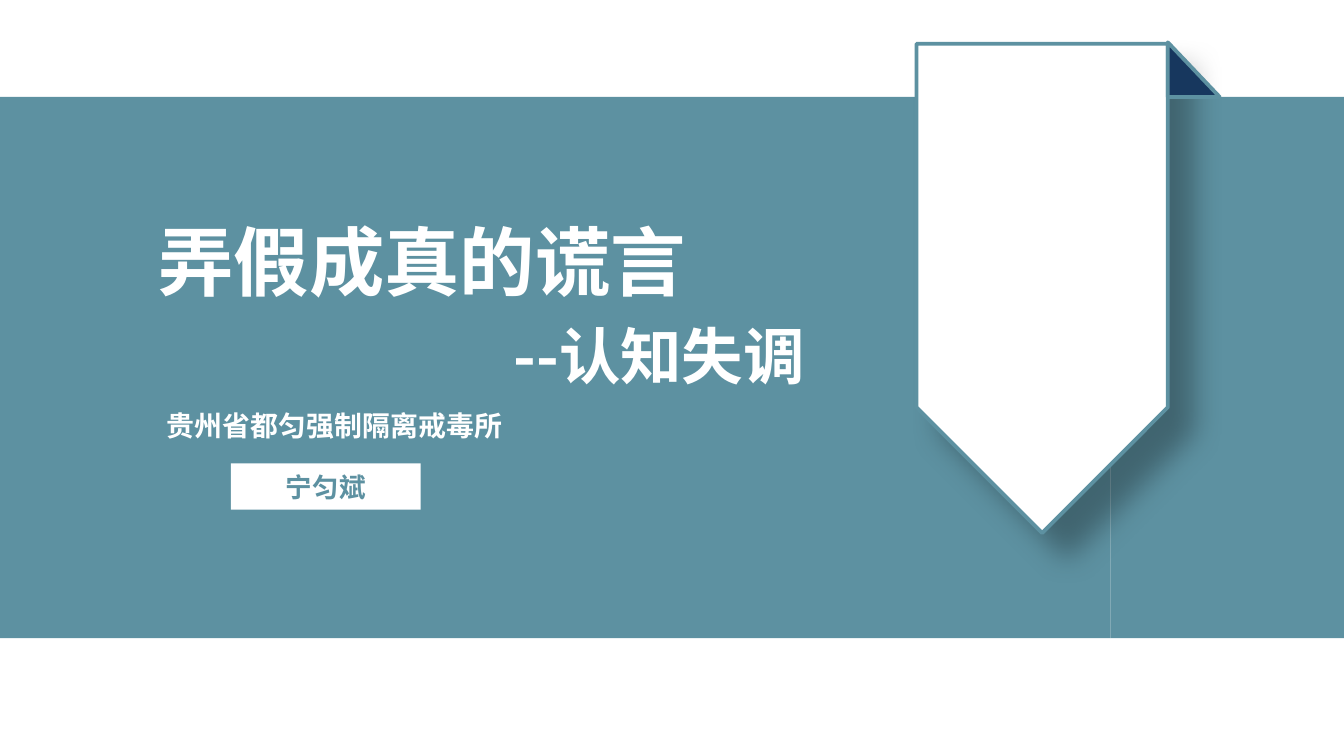
from dataclasses import dataclass

from pptx import Presentation
from pptx.dml.color import RGBColor
from pptx.enum.shapes import MSO_SHAPE as Preset
from pptx.enum.text import MSO_ANCHOR as Anchor, MSO_AUTO_SIZE as AutoSize, PP_ALIGN as Align
from pptx.oxml import parse_xml
from pptx.oxml.ns import nsdecls
from pptx.util import Inches, Pt


@dataclass(frozen=True)
class Theme:
    font: str = "Noto Sans CJK JP"
    teal: str = "5D91A1"
    navy: str = "17375E"
    white: str = "FFFFFF"
    shadow: str = "000000"
    title: float = 39.7
    subtitle: float = 32.4
    affiliation: float = 14.7
    speaker: float = 14
    outline: float = 2


THEME = Theme()


def write_text(box, text, size, color, align=Align.LEFT):
    frame = box.text_frame
    frame.text = text
    frame.word_wrap = True
    frame.auto_size = AutoSize.NONE
    frame.vertical_anchor = Anchor.MIDDLE
    frame.margin_left = frame.margin_right = Inches(0.1)
    frame.margin_top = frame.margin_bottom = 0
    para = frame.paragraphs[0]
    para.alignment = align
    para.space_before = Pt(0)
    span = para.runs[0]
    span.font.name = THEME.font
    span.font.size = Pt(size)
    span.font.bold = True
    span.font.color.rgb = RGBColor.from_string(color)
    east_asian = parse_xml(f'<a:ea {nsdecls("a")} typeface="{THEME.font}"/>')
    span.font.latin_element = None
    span._r.get_or_add_rPr().append(east_asian)


def fill_placeholder(page, box, bounds, text, size):
    box.left, box.top, box.width, box.height = map(Inches, bounds)
    write_text(box, text, size, THEME.white)
    page.shapes.element.append(box.element)


def add_label(page, bounds, text, size):
    box = page.shapes.add_textbox(*map(Inches, bounds))
    write_text(box, text, size, THEME.white)


def add_block(page, preset, bounds, fill, outline=None):
    block = page.shapes.add_shape(preset, *map(Inches, bounds))
    block.shadow.inherit = False
    block.fill.solid()
    block.fill.fore_color.rgb = RGBColor.from_string(fill)
    if outline:
        block.line.color.rgb = RGBColor.from_string(outline)
        block.line.width = Pt(THEME.outline)
    else:
        block.line.fill.background()
    return block


def cast_shadow(block, blur, distance, angle, opacity):
    effects = block.element.spPr.find(
        "{http://schemas.openxmlformats.org/drawingml/2006/main}effectLst")
    effects.append(parse_xml(
        f'<a:outerShdw {nsdecls("a")} blurRad="{Pt(blur)}" dist="{Pt(distance)}" '
        f'dir="{angle * 60000}" algn="tl" rotWithShape="0">'
        f'<a:srgbClr val="{THEME.shadow}"><a:alpha val="{opacity * 1000}"/></a:srgbClr>'
        '</a:outerShdw>'))


def add_ribbon(page):
    ribbon = add_block(page, Preset.PENTAGON, (5.84, 1.19, 3.58, 1.84),
                       THEME.white, THEME.teal)
    ribbon.rotation = 90
    cast_shadow(ribbon, blur=15, distance=18, angle=45, opacity=30)
    add_block(page, Preset.RIGHT_TRIANGLE, (8.55, 0.31, 0.38, 0.4),
              THEME.navy, THEME.teal)


def main():
    deck = Presentation()
    deck.slide_width, deck.slide_height = Inches(9.84), Inches(5.51)
    page = deck.slides.add_slide(deck.slide_layouts[0])
    title, subtitle = page.placeholders

    for left, width in ((0, 8.13), (8.13, 1.71)):
        add_block(page, Preset.RECTANGLE, (left, 0.71, width, 3.96), THEME.teal)
    add_label(page, (1.12, 2.94, 3.67, 0.35), "贵州省都匀强制隔离戒毒所", THEME.affiliation)
    speaker = add_block(page, Preset.RECTANGLE, (1.69, 3.39, 1.39, 0.34), THEME.white)
    write_text(speaker, "宁匀斌", THEME.speaker, THEME.teal, Align.CENTER)
    fill_placeholder(page, subtitle, (3.66, 2.28, 3.09, 0.64), "--认知失调", THEME.subtitle)
    fill_placeholder(page, title, (1.06, 1.52, 5.2, 0.77), "弄假成真的谎言", THEME.title)
    add_ribbon(page)
    deck.save("out.pptx")


if __name__ == "__main__":
    main()
